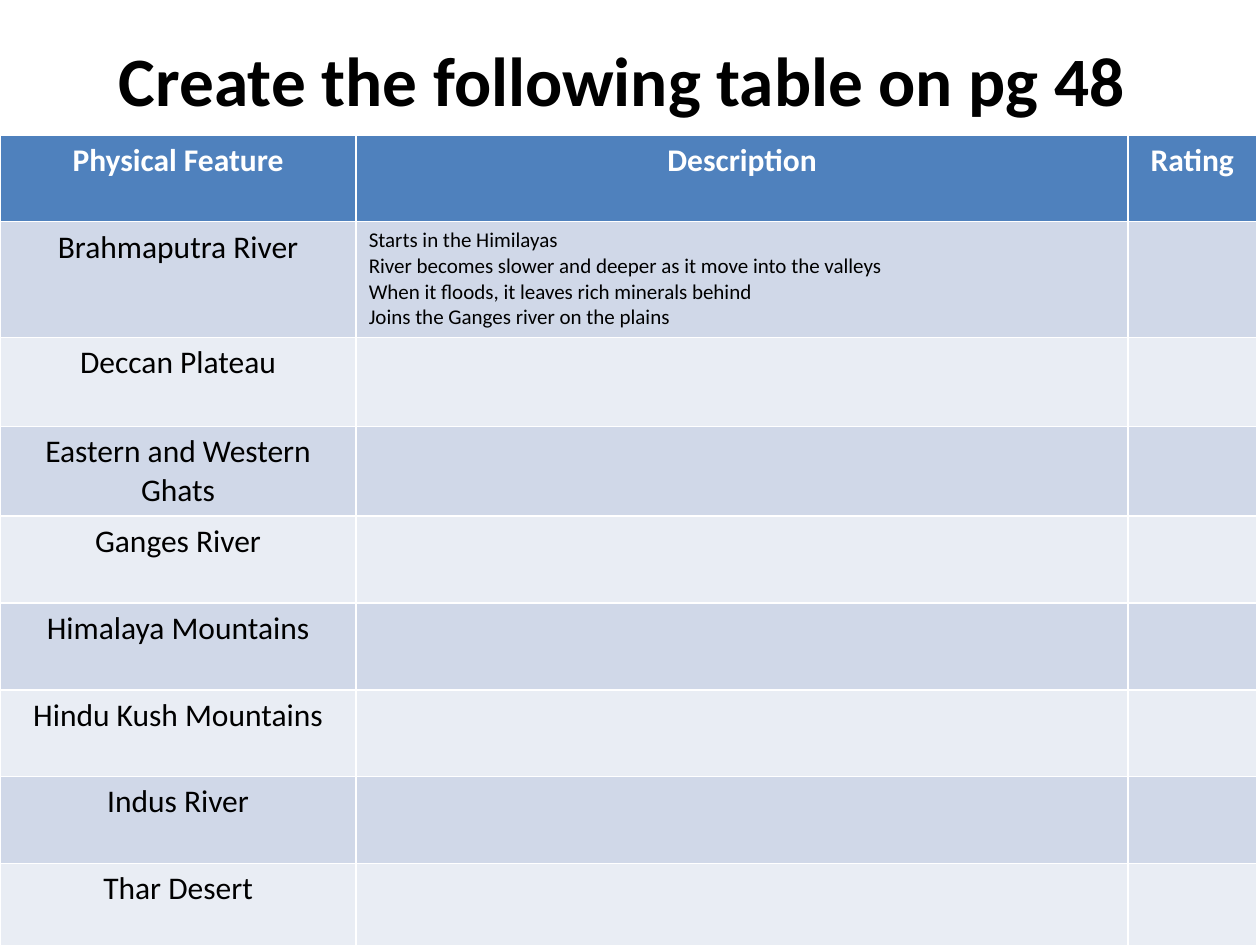
from dataclasses import dataclass

from pptx import Presentation
from pptx import util as u
from pptx.dml.color import RGBColor
from pptx.enum import text


@dataclass(frozen=True)
class Theme:
    font: str = "Calibri"
    ink: str = "000000"
    header_ink: str = "FFFFFF"
    header_fill: str = "4F81BD"
    band_fills: tuple = ("D0D8E8", "E9EDF4")
    title_size: float = 39.6
    table_size: float = 18
    note_size: float = 12


HEADERS = ["Physical Feature", "Description", "Rating"]
FEATURES = [
    "Brahmaputra River",
    "Deccan Plateau",
    "Eastern and Western Ghats",
    "Ganges River",
    "Himalaya Mountains",
    "Hindu Kush Mountains",
    "Indus River",
    "Thar Desert",
]
DESCRIPTIONS = {
    "Brahmaputra River": "\n".join([
        "Starts in the Himilayas",
        "River becomes slower and deeper as it move into the valleys",
        "When it floods, it leaves rich minerals behind",
        "Joins the Ganges river on the plains",
    ]),
}
COLUMN_WIDTHS = [7.18, 15.56, 2.59]
ROW_HEIGHTS = [1.75, 2.33, 1.8, 1.8] + [1.75] * 5


class SlideBuilder:
    def __init__(self, presentation, theme):
        self.theme = theme
        self.slide = presentation.slides.add_slide(presentation.slide_layouts[5])

    def format_text(self, frame, size, color, bold=False, centered=True):
        for paragraph in frame.paragraphs:
            paragraph.alignment = text.PP_ALIGN.CENTER if centered else text.PP_ALIGN.LEFT
            font = paragraph.font
            font.name = self.theme.font
            font.size = u.Pt(size)
            font.bold = bold
            font.color.rgb = RGBColor.from_string(color)

    def title(self, words, left, top, width, height):
        shape = self.slide.shapes.title
        shape.left, shape.top = u.Cm(left), u.Cm(top)
        shape.width, shape.height = u.Cm(width), u.Cm(height)
        frame = shape.text_frame
        frame.text = words
        frame.vertical_anchor = text.MSO_ANCHOR.MIDDLE
        self.format_text(frame, self.theme.title_size, self.theme.ink, bold=True)

    def cell(self, cell, words, fill, size, color, bold=False, centered=True):
        cell.fill.solid()
        cell.fill.fore_color.rgb = RGBColor.from_string(fill)
        cell.text = words
        self.format_text(cell.text_frame, size, color, bold, centered)

    def table(self, headers, rows, left, top, widths, heights):
        theme = self.theme
        table = self.slide.shapes.add_table(
            len(heights), len(widths), u.Cm(left), u.Cm(top),
            u.Cm(sum(widths)), u.Cm(sum(heights)),
        ).table
        for column, width in zip(table.columns, widths):
            column.width = u.Cm(width)
        for row, height in zip(table.rows, heights):
            row.height = u.Cm(height)
        for column, header in enumerate(headers):
            self.cell(table.cell(0, column), header, theme.header_fill,
                      theme.table_size, theme.header_ink, bold=True)
        for index, values in enumerate(rows):
            fill = theme.band_fills[index % 2]
            for column, words in enumerate(values):
                is_note = column == 1 and bool(words)
                size = theme.note_size if is_note else theme.table_size
                self.cell(table.cell(index + 1, column), words, fill, size,
                          theme.ink, centered=not is_note)


def main():
    presentation = Presentation()
    presentation.slide_width = u.Cm(25.4)
    presentation.slide_height = u.Cm(19.05)
    builder = SlideBuilder(presentation, Theme())
    builder.title("Create the following table on pg 48 ", 1.27, 0, 22.86, 3.18)
    rows = [(feature, DESCRIPTIONS.get(feature, ""), "") for feature in FEATURES]
    builder.table(HEADERS, rows, 0, 2.72, COLUMN_WIDTHS, ROW_HEIGHTS)
    presentation.save("out.pptx")


if __name__ == "__main__":
    main()
